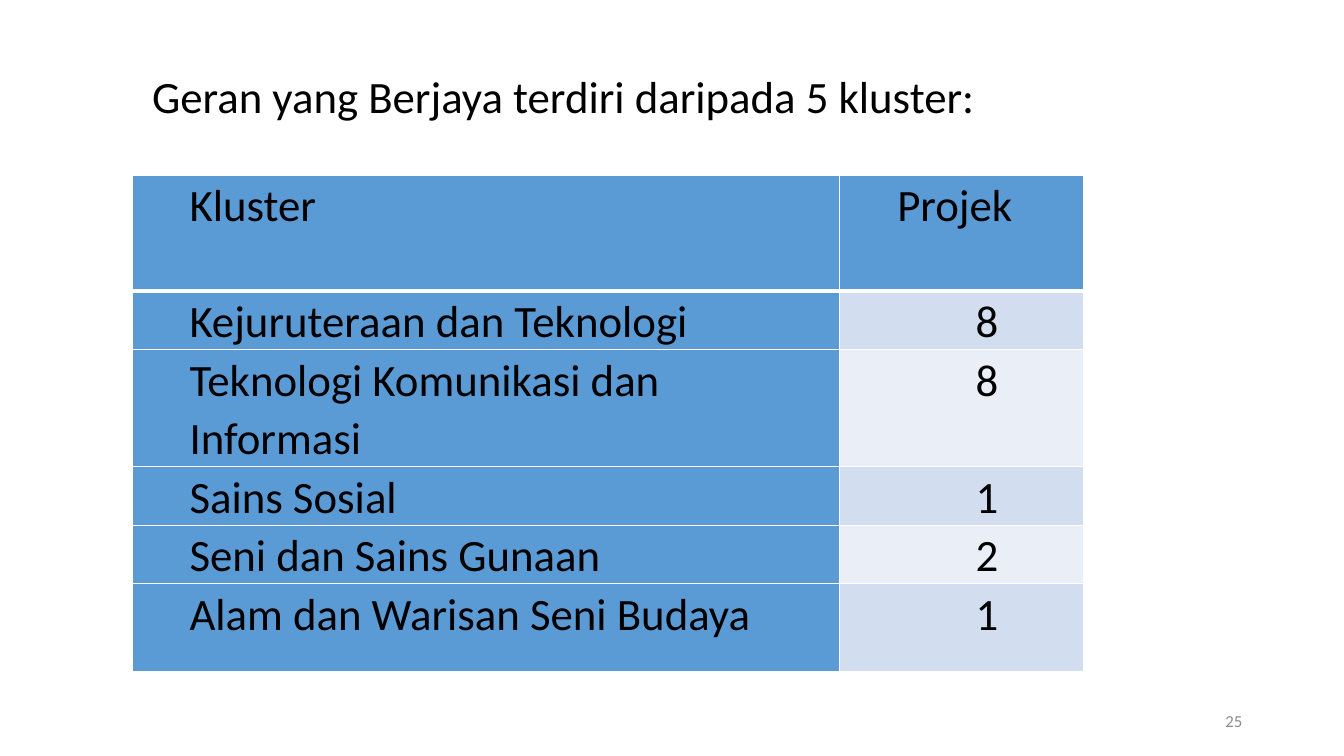
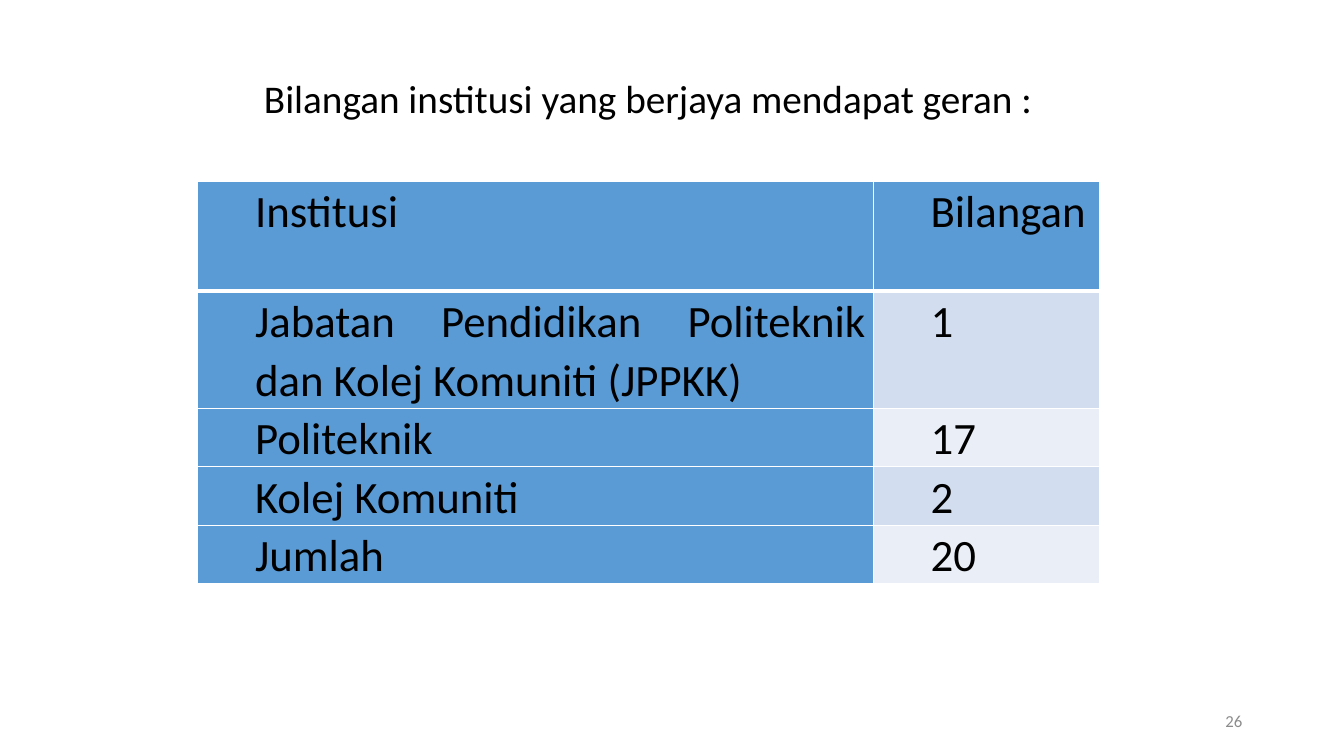
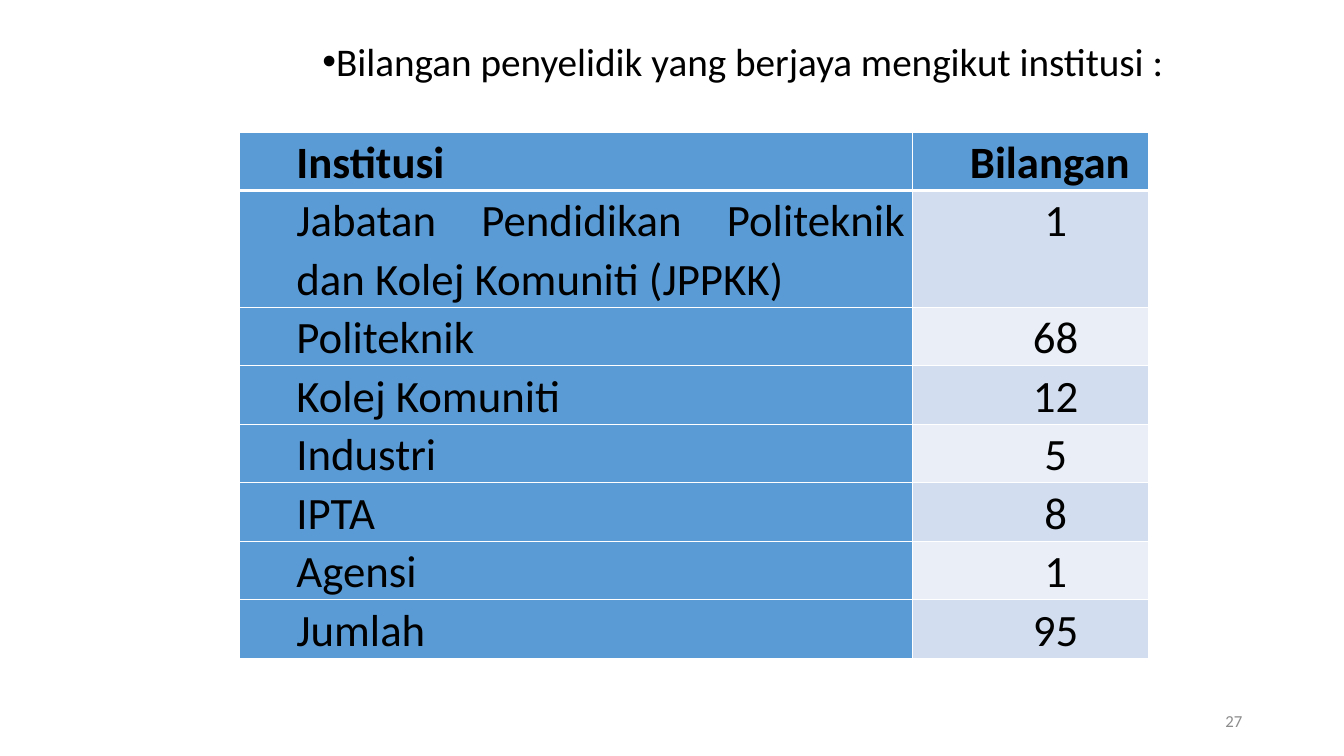
from dataclasses import dataclass

from lxml import etree
from pptx import Presentation
from pptx.dml.color import RGBColor
from pptx.enum.text import MSO_ANCHOR, MSO_AUTO_SIZE, PP_ALIGN
from pptx.oxml.ns import qn
from pptx.util import Inches, Pt

LEFT, CENTER = PP_ALIGN.LEFT, PP_ALIGN.CENTER
RIGHT, JUSTIFY = PP_ALIGN.RIGHT, PP_ALIGN.JUSTIFY
MIDDLE = MSO_ANCHOR.MIDDLE
GROW = MSO_AUTO_SIZE.SHAPE_TO_FIT_TEXT


@dataclass(frozen=True)
class Theme:
    font: str = "Calibri"
    ink: str = "000000"
    muted: str = "8C8C8C"
    accent: str = "5B9BD5"
    bands: tuple = ("D2DEEF", "EAEFF7")
    rule: str = "FFFFFF"
    large: int = 32
    medium: int = 28
    small: int = 12
    line_spacing: float = 1.07
    line: float = 0.58  # height of a one-line table row
    thin: int = 1
    thick: int = 3


T = Theme()


def add_run(p, text, size, color=T.ink, bold=False):
    r = p.add_run()
    r.text = text
    r.font.name = T.font
    r.font.size = Pt(size)
    r.font.bold = bold
    r.font.color.rgb = RGBColor.from_string(color)


def add_text(s, box, text, size, color=T.ink, align=LEFT):
    tf = s.shapes.add_textbox(*map(Inches, box)).text_frame
    tf.vertical_anchor = MIDDLE
    tf.word_wrap = True
    p = tf.paragraphs[0]
    p.alignment = align
    add_run(p, text, size, color)
    return tf


def add_title(s, box, text, size, bullet=False):
    tf = add_text(s, box, text, size)
    tf.word_wrap = False
    tf.auto_size = GROW
    if bullet:
        pPr = tf.paragraphs[0]._p.get_or_add_pPr()
        pPr.set("marL", "0")
        pPr.set("indent", str(Inches(0.06)))
        etree.SubElement(pPr, qn("a:buFont")).set("typeface", "Arial")
        etree.SubElement(pPr, qn("a:buChar")).set("char", "•")


def set_borders(cell, top, bottom):
    tcPr = cell._tc.get_or_add_tcPr()
    widths = {"a:lnL": T.thin, "a:lnR": T.thin, "a:lnT": top, "a:lnB": bottom}
    for tag, width in widths.items():
        ln = etree.SubElement(tcPr, qn(tag), w=str(Pt(width)))
        fill = etree.SubElement(ln, qn("a:solidFill"))
        etree.SubElement(fill, qn("a:srgbClr"), val=T.rule)


def fill_cell(cell, text, row, color, align, bold):
    # Borders come before the fill in the cell properties
    set_borders(cell, T.thick if row == 1 else T.thin,
                T.thick if row == 0 else T.thin)
    cell.fill.solid()
    cell.fill.fore_color.rgb = RGBColor.from_string(color)
    cell.margin_left = cell.margin_right = Inches(0.07)
    cell.margin_top = cell.margin_bottom = 0
    p = cell.text_frame.paragraphs[0]
    p.alignment = align
    p.line_spacing = T.line_spacing
    p._p.get_or_add_pPr().set("marL", str(Inches(0.5)))
    add_run(p, text, T.large, bold=bold)


def add_count_table(s, at, widths, rows, heights, label_align=JUSTIFY,
                    count_align=CENTER, bold_header=False):
    """Labels on the accent colour, counts on alternating bands.

    heights maps a row number to its height where it is not one line."""
    row_heights = [heights.get(i, T.line) for i in range(len(rows))]
    table = s.shapes.add_table(
        len(rows), len(widths), *map(Inches, at),
        Inches(sum(widths)), Inches(sum(row_heights))).table
    for column, width in zip(table.columns, widths):
        column.width = Inches(width)
    for i, (label, count) in enumerate(rows):
        table.rows[i].height = Inches(row_heights[i])
        header = i == 0
        bold = header and bold_header
        fill_cell(table.cell(i, 0), label, i, T.accent, label_align, bold)
        fill_cell(table.cell(i, 1), count, i,
                  T.accent if header else T.bands[(i - 1) % 2],
                  JUSTIFY if header else count_align, bold)


def add_slide(prs, number):
    s = prs.slides.add_slide(prs.slide_layouts[6])
    add_text(s, (9.42, 6.95, 3, 0.4), str(number), T.small, T.muted, RIGHT)
    return s


def main():
    prs = Presentation()
    prs.slide_width, prs.slide_height = Inches(13.33), Inches(7.5)
    department = "Jabatan Pendidikan Politeknik dan Kolej Komuniti (JPPKK)"
    two_lines = 2 * T.line

    # Successful grants by cluster
    s = add_slide(prs, 25)
    add_count_table(s, (1.31, 1.74), (7.02, 2.42), [
        ("Kluster", "Projek"),
        ("Kejuruteraan dan Teknologi", "8"),
        ("Teknologi Komunikasi dan Informasi", "8"),
        ("Sains Sosial", "1"),
        ("Seni dan Sains Gunaan", "2"),
        ("Alam dan Warisan Seni Budaya", "1"),
    ], {0: 1.15, 2: two_lines, 5: 0.87}, label_align=LEFT)
    add_title(s, (1.41, 0.63, 8.55, 0.64),
              "Geran yang Berjaya terdiri daripada 5 kluster:", T.large)

    # Institutions that received grants
    s = add_slide(prs, 26)
    add_count_table(s, (1.96, 1.8), (6.7, 2.25), [
        ("Institusi", "Bilangan"),
        (department, "1"),
        ("Politeknik", "17"),
        ("Kolej Komuniti", "2"),
        ("Jumlah", "20"),
    ], {0: 1.09, 1: two_lines}, count_align=JUSTIFY)
    add_title(s, (2.52, 0.69, 8.1, 0.57),
              "Bilangan institusi yang berjaya mendapat geran :", T.medium)

    # Successful researchers by institution
    s = add_slide(prs, 27)
    add_count_table(s, (2.37, 1.31), (6.68, 2.34), [
        ("Institusi", "Bilangan"),
        (department, "1"),
        ("Politeknik", "68"),
        ("Kolej Komuniti", "12"),
        ("Industri", "5"),
        ("IPTA", "8"),
        ("Agensi", "1"),
        ("Jumlah", "95"),
    ], {1: two_lines}, bold_header=True)
    add_title(s, (3.04, 0.32, 8.69, 0.57),
              "Bilangan penyelidik yang berjaya mengikut institusi :",
              T.medium, bullet=True)

    prs.save("out.pptx")


if __name__ == "__main__":
    main()
